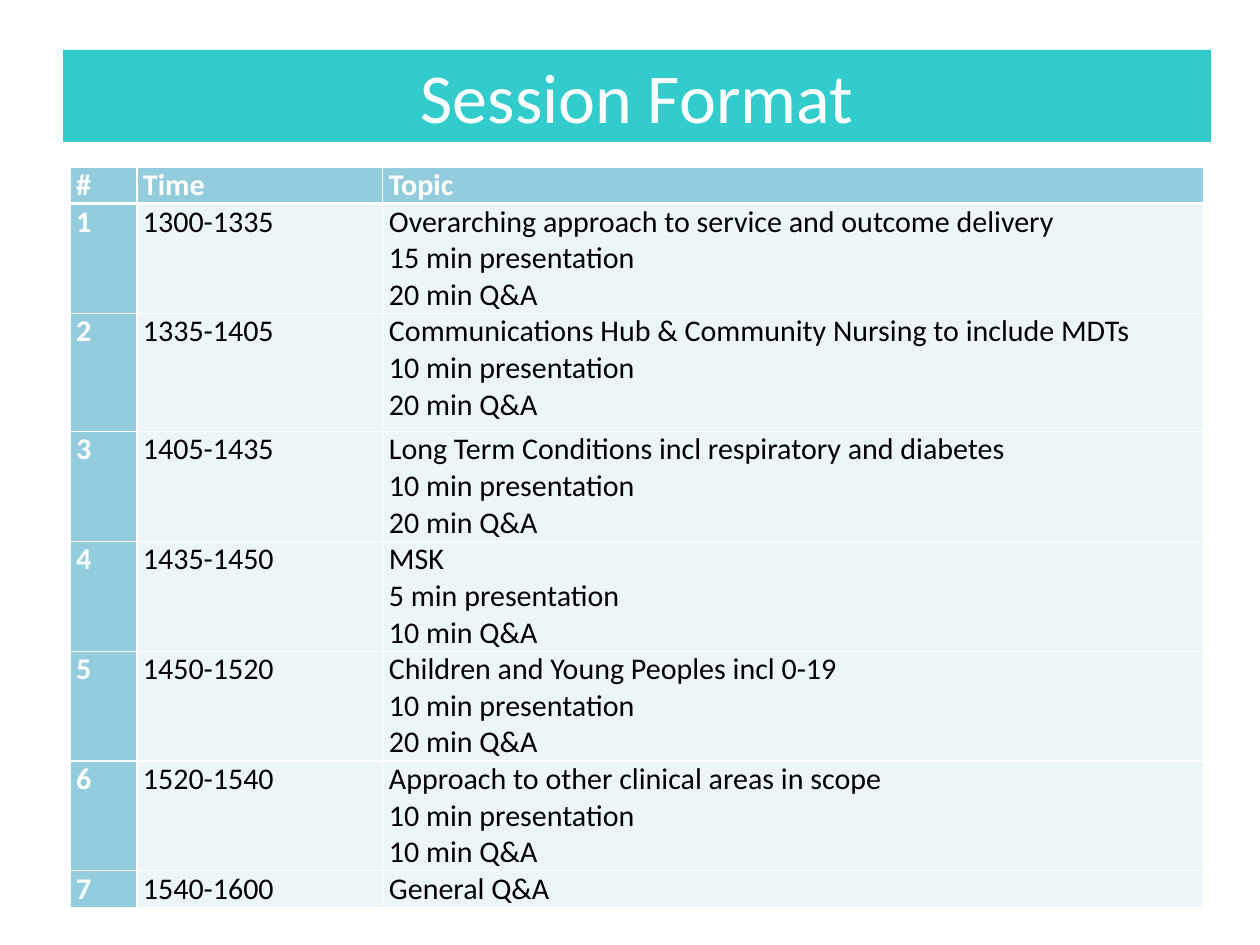
from lxml import etree
from pptx import Presentation
from pptx import util as u
from pptx.dml.color import RGBColor
from pptx.enum import text
from pptx.oxml.ns import qn

PX = 10160
FONT = "Calibri"
WHITE = RGBColor(0xFF, 0xFF, 0xFF)
BLACK = RGBColor(0x00, 0x00, 0x00)
TEAL = RGBColor(0x33, 0xCC, 0xCC)
SKY = RGBColor(0x93, 0xCD, 0xDD)
TINT_PERCENT = 17

COLUMNS = [67, 246, 821]
ROWS = [34, 103, 118, 103, 103, 103, 103, 34]
HEADER = ["#", "Time", "Topic"]
SESSIONS = [
    ("1300-1335", "Overarching approach to service and outcome delivery", 15, 20),
    ("1335-1405", "Communications Hub & Community Nursing to include MDTs", 10, 20),
    ("1405-1435", "Long Term Conditions incl respiratory and diabetes", 10, 20),
    ("1435-1450", "MSK", 5, 10),
    ("1450-1520", "Children and Young Peoples incl 0-19", 10, 20),
    ("1520-1540", "Approach to other clinical areas in scope", 10, 10),
]
CLOSING = ("1540-1600", "General Q&A")


def px(length):
    """Turn px into EMU."""
    return u.Emu(length * PX)


def style_font(font, size, color, bold=False):
    """Set the typeface, size, colour and weight of a font."""
    font.name, font.size, font.bold = FONT, u.Pt(size), bold
    font.color.rgb = color


def add_title(page, wording, left, top, width, height):
    """Format the title placeholder as a coloured banner."""
    title = page.shapes.title
    title.left, title.top, title.width, title.height = map(px, (left, top, width, height))
    title.fill.solid()
    title.fill.fore_color.rgb = TEAL
    frame = title.text_frame
    frame.text = wording
    frame.auto_size = text.MSO_AUTO_SIZE.NONE
    frame.vertical_anchor = text.MSO_ANCHOR.MIDDLE
    frame.margin_left = frame.margin_right = px(13)
    frame.margin_top = frame.margin_bottom = px(6)
    para = frame.paragraphs[0]
    para.alignment = text.PP_ALIGN.CENTER
    style_font(para.font, 56, WHITE)


def add_borders(cell, bottom, top):
    """Draw white lines around a cell, with given top and bottom widths in points."""
    properties = cell._tc.get_or_add_tcPr()
    for index, (side, width) in enumerate(zip("LRTB", (1, 1, top, bottom))):
        line = etree.Element(qn(f"a:ln{side}"), w=str(u.Pt(width)))
        fill = etree.SubElement(line, qn("a:solidFill"))
        etree.SubElement(fill, qn("a:srgbClr"), val=str(WHITE))
        properties.insert(index, line)


def fill_cell(cell, wording, is_header, is_label, top):
    """Write and format one cell of the agenda."""
    cell.text = wording
    cell.margin_left = cell.margin_right = px(6)
    cell.margin_top = cell.margin_bottom = 0
    cell.fill.solid()
    cell.fill.fore_color.rgb = SKY
    if not is_label:
        color = cell._tc.tcPr.find(".//" + qn("a:srgbClr"))
        etree.SubElement(color, qn("a:alpha"), val=str(TINT_PERCENT * 1000))
    add_borders(cell, 3 if is_header else 1, top)
    for para in cell.text_frame.paragraphs:
        style_font(para.font, 24, WHITE if is_label else BLACK, is_label)


def agenda_rows():
    """Return the wording of every table row."""
    details = [
        (time, f"{topic}\n{talk} min presentation\n{questions} min Q&A")
        for time, topic, talk, questions in SESSIONS
    ]
    numbered = enumerate(details + [CLOSING], start=1)
    return [HEADER] + [[str(number), *entry] for number, entry in numbered]


def add_agenda(page, left, top):
    """Place the agenda table with its corner at the given point."""
    frame = page.shapes.add_table(
        len(ROWS), len(COLUMNS), px(left), px(top), px(sum(COLUMNS)), px(sum(ROWS))
    )
    table = frame.table
    for column, width in zip(table.columns, COLUMNS):
        column.width = px(width)
    for r, (height, entries) in enumerate(zip(ROWS, agenda_rows())):
        table.rows[r].height = px(height)
        for c, wording in enumerate(entries):
            fill_cell(table.cell(r, c), wording, r == 0, r == 0 or c == 0, 3 if r == 1 else 1)


def main():
    """Build and save the deck."""
    deck = Presentation()
    deck.slide_width, deck.slide_height = px(1260), px(945)
    page = deck.slides.add_slide(deck.slide_layouts[5])
    add_title(page, "Session Format", 63, 50, 1148, 92)
    add_agenda(page, 70, 167)
    deck.save("out.pptx")


if __name__ == "__main__":
    main()
